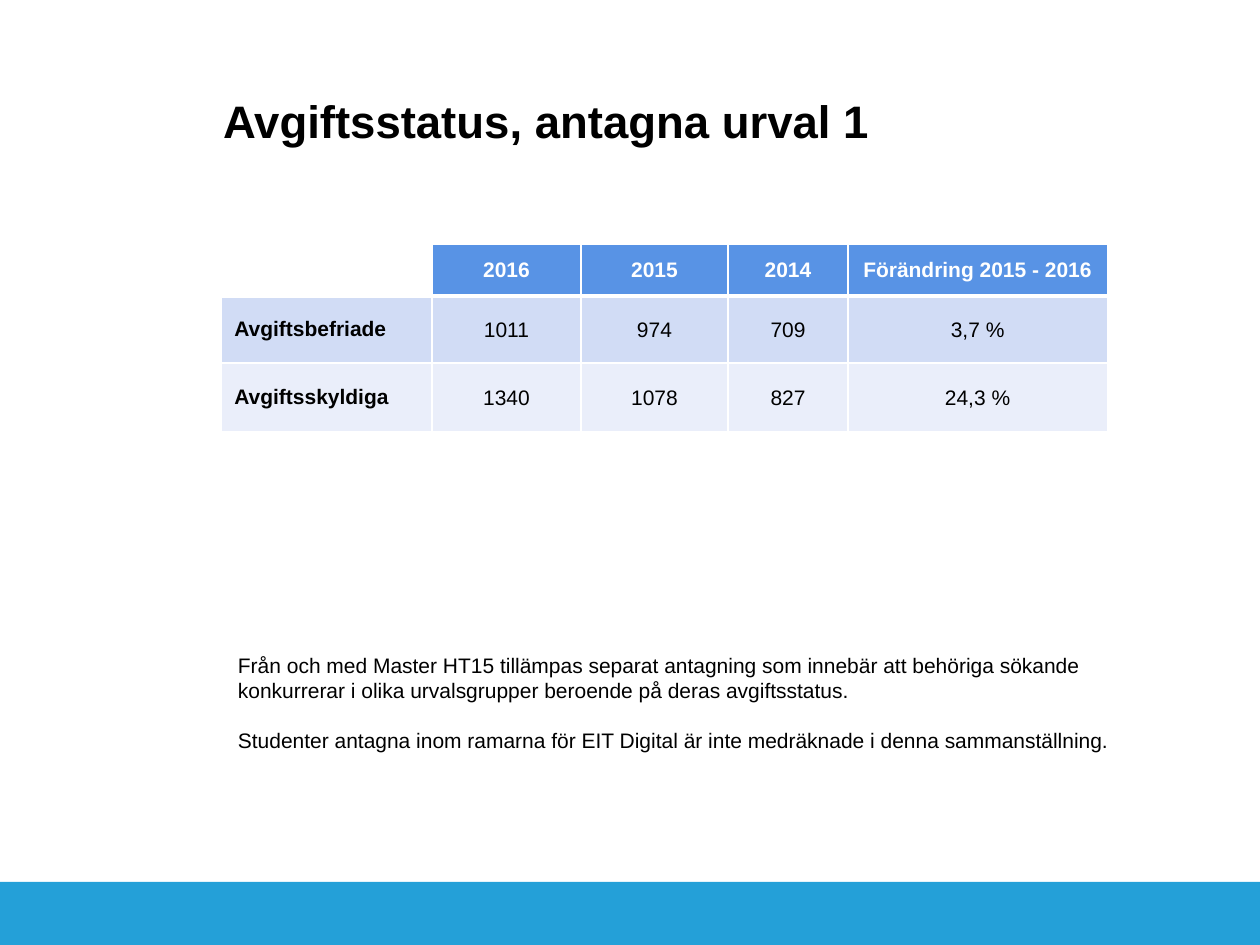
"""Build a slide with a table of admitted students by fee status."""
from math import cos, radians, sin

from lxml import etree
from pptx import Presentation
from pptx.dml.color import RGBColor
from pptx.enum.text import MSO_ANCHOR, PP_ALIGN
from pptx.oxml.ns import qn
from pptx.util import Inches, Pt

LEFT, CENTER = PP_ALIGN.LEFT, PP_ALIGN.CENTER
TOP, MIDDLE, BOTTOM = MSO_ANCHOR.TOP, MSO_ANCHOR.MIDDLE, MSO_ANCHOR.BOTTOM
TITLE_ONLY = 5
FONT = "Arial"
COLORS = {
    "white": "FFFFFF",
    "black": "000000",
    "band": "24A0D8",
    "header": "5893E5",
    "row_dark": "D1DCF5",
    "row_light": "EAEEFA",
}
ROWS = [
    ["", "2016", "2015", "2014", "Förändring 2015 - 2016"],
    ["Avgiftsbefriade", "1011", "974", "709", "3,7 %"],
    ["Avgiftsskyldiga", "1340", "1078", "827", "24,3 %"],
]
ROW_FILLS = ["header", "row_dark", "row_light"]
COLUMN_WIDTHS = [1.67, 1.18, 1.17, 0.95, 2.06]
ROW_HEIGHTS = [0.41, 0.53, 0.55]
NOTES = [
    "Från och med Master HT15 tillämpas separat antagning som innebär att behöriga sökande "
    "konkurrerar i olika urvalsgrupper beroende på deras avgiftsstatus.",
    "Studenter antagna inom ramarna för EIT Digital är inte medräknade i denna sammanställning.",
]


def rgb(name):
    return RGBColor.from_string(COLORS[name])


def set_format(target, **values):
    for name, value in values.items():
        setattr(target, name, value)


def set_font(para, size, color="black", bold=False):
    for item in [para, *para.runs]:
        set_format(item.font, name=FONT, size=Pt(size), bold=bold)
        item.font.color.rgb = rgb(color)


def set_margins(target, left, top, right, bottom):
    set_format(target, margin_left=Inches(left), margin_top=Inches(top),
               margin_right=Inches(right), margin_bottom=Inches(bottom))


def arc(x, y, radius, start, end, steps=8):
    angles = [radians(start + (end - start) * step / steps) for step in range(steps + 1)]
    return [(x + radius * cos(angle), y + radius * sin(angle)) for angle in angles]


def add_band(page):
    step_x, top, low_top, radius = 1.38, 6.53, 6.87, 0.08
    points = [(10, top), (10, 7.5), (0, 7.5), (0, low_top)]
    points += arc(step_x - radius, low_top - radius, radius, 90, 0)
    points += arc(step_x + radius, top + radius, radius, 180, 270)
    builder = page.shapes.build_freeform(*points[0], scale=Inches(1))
    builder.add_line_segments(points[1:], close=True)
    band = builder.convert_to_shape()
    band.shadow.inherit = False
    band.fill.solid()
    band.fill.fore_color.rgb = rgb("band")
    band.line.fill.background()


def add_title(page, text):
    title = page.shapes.title
    set_format(title, left=Inches(1.77), top=Inches(0.44),
               width=Inches(7.59), height=Inches(0.73))
    frame = title.text_frame
    set_margins(frame, 0, 0, 0, 0)
    set_format(frame, text=text, vertical_anchor=BOTTOM, word_wrap=True)
    para = frame.paragraphs[0]
    set_format(para, alignment=LEFT, line_spacing=Pt(30))
    set_font(para, 26, bold=True)


def add_borders(cell, bottom_width, top_width):
    properties = cell._tc.get_or_add_tcPr()
    for tag, width in [("lnL", 1), ("lnR", 1), ("lnT", top_width), ("lnB", bottom_width)]:
        line = etree.SubElement(properties, qn(f"a:{tag}"), w=str(Pt(width)))
        fill = etree.SubElement(line, qn("a:solidFill"))
        etree.SubElement(fill, qn("a:srgbClr"), val=COLORS["white"])


def fill_cell(cell, text, row, column):
    header, label = row == 0, column == 0
    add_borders(cell, 3 if header else 1, 3 if row == 1 else 1)
    cell.fill.solid()
    cell.fill.fore_color.rgb = rgb("white" if header and label else ROW_FILLS[row])
    set_format(cell, text=text, vertical_anchor=MIDDLE)
    if not header and not label:
        set_margins(cell, 0.01, 0.01, 0.01, 0)
    para = cell.text_frame.paragraphs[0]
    para.alignment = LEFT if label else CENTER
    set_font(para, 12, "white" if header else "black", header or label)


def add_fee_table(page):
    frame = page.shapes.add_table(len(ROWS), len(COLUMN_WIDTHS), Inches(1.76), Inches(1.94),
                                  Inches(sum(COLUMN_WIDTHS)), Inches(sum(ROW_HEIGHTS)))
    table = frame.table
    table.horz_banding = False
    for column, width in zip(table.columns, COLUMN_WIDTHS):
        column.width = Inches(width)
    for row, height in zip(table.rows, ROW_HEIGHTS):
        row.height = Inches(height)
    for row, texts in enumerate(ROWS):
        for column, text in enumerate(texts):
            fill_cell(table.cell(row, column), text, row, column)


def add_notes(page):
    box = page.shapes.add_textbox(Inches(1.79), Inches(5.13), Inches(7.55), Inches(1.62))
    frame = box.text_frame
    set_format(frame, word_wrap=True, vertical_anchor=TOP)
    for index, text in enumerate(NOTES):
        para = frame.add_paragraph() if index else frame.paragraphs[0]
        para.text = text
        if index:
            para.space_before = Pt(14)
        set_font(para, 12)


def main():
    deck = Presentation()
    set_format(deck, slide_width=Inches(10), slide_height=Inches(7.5))
    page = deck.slides.add_slide(deck.slide_layouts[TITLE_ONLY])
    add_band(page)
    add_title(page, "Avgiftsstatus, antagna urval 1")
    add_fee_table(page)
    add_notes(page)
    deck.save("out.pptx")


if __name__ == "__main__":
    main()
